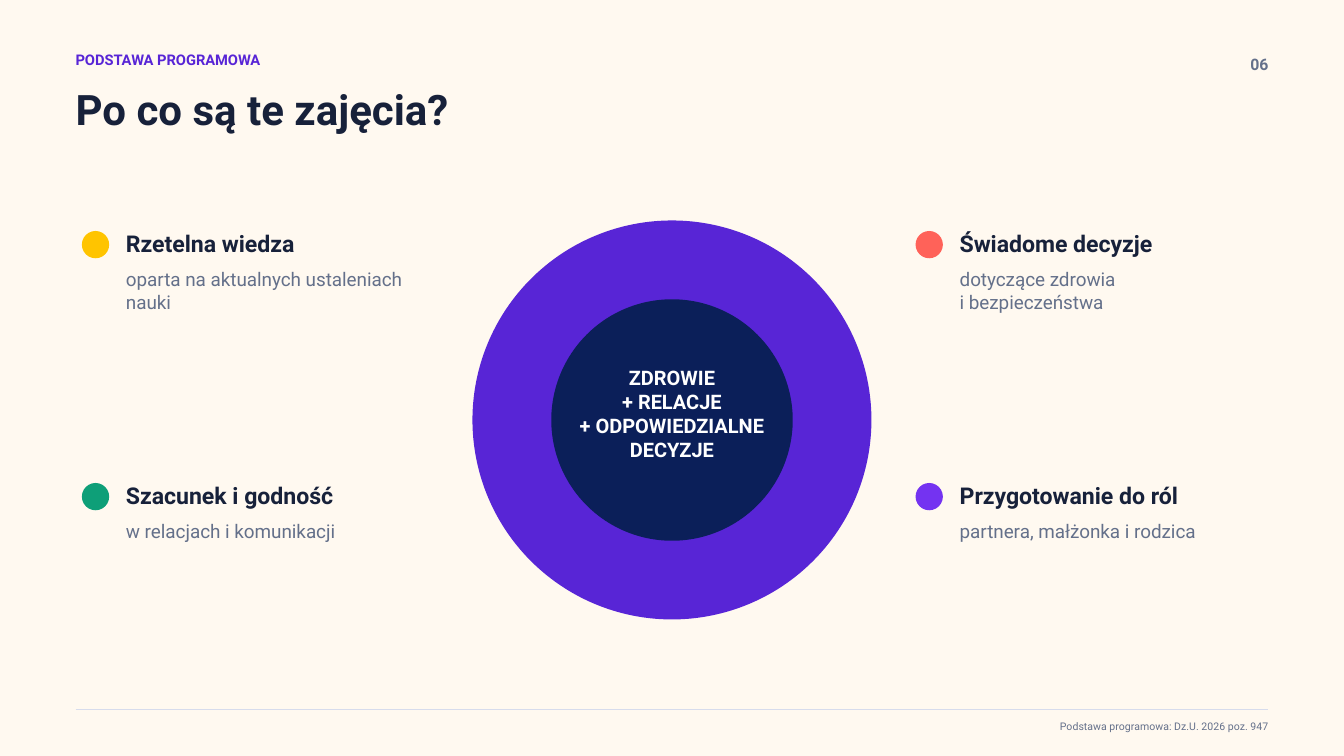
from dataclasses import dataclass

import pptx
import pptx.dml.color
import pptx.enum.shapes
import pptx.enum.text
import pptx.oxml
import pptx.oxml.ns
import pptx.slide
import pptx.util

ALIGN = pptx.enum.text.PP_ALIGN
ANCHOR = pptx.enum.text.MSO_ANCHOR


@dataclass(frozen=True)
class TextStyle:
    size: float
    color: str
    bold: bool = False
    align: ALIGN = ALIGN.LEFT
    anchor: ANCHOR = ANCHOR.TOP


@dataclass(frozen=True)
class Theme:
    font: str = "Roboto"
    background: str = "FFF9F0"
    ring: str = "5825D6"
    core: str = "0B1F59"
    rule: str = "D7DCEC"
    rule_width: float = 0.75
    section: TextStyle = TextStyle(10.5, "5825D6", True)
    title: TextStyle = TextStyle(30, "17213A", True)
    page: TextStyle = TextStyle(11.25, "64708A", True, ALIGN.RIGHT)
    center: TextStyle = TextStyle(14.25, "FFFFFF", True, ALIGN.CENTER, ANCHOR.MIDDLE)
    heading: TextStyle = TextStyle(16.5, "17213A", True)
    detail: TextStyle = TextStyle(13.5, "64708A")
    source: TextStyle = TextStyle(7.5, "64708A", align=ALIGN.RIGHT)


@dataclass(frozen=True)
class Box:
    left: int
    top: int
    width: int
    height: int


@dataclass(frozen=True)
class Goal:
    column: int
    row: int
    color: str
    heading: str
    detail: str


THEME = Theme()
COLUMN_STEP, ROW_STEP = 794, 240
GOALS = [
    Goal(0, 0, "FFC400", "Rzetelna wiedza", "oparta na aktualnych ustaleniach nauki"),
    Goal(1, 0, "FF6259", "Świadome decyzje", "dotyczące zdrowia\ni bezpieczeństwa"),
    Goal(0, 1, "0E9F78", "Szacunek i godność", "w relacjach i komunikacji"),
    Goal(1, 1, "7433F1", "Przygotowanie do ról", "partnera, małżonka i rodzica"),
]


def px(length: int) -> int:
    """Convert px to EMU at 96 px to the inch."""
    return pptx.util.Emu(length * 9525)


def rgb(color: str) -> pptx.dml.color.RGBColor:
    """Return the colour for a hex string."""
    return pptx.dml.color.RGBColor.from_string(color)


def add_text(slide: pptx.slide.Slide, box: Box, text: str, style: TextStyle) -> None:
    """Add a text box without insets, one paragraph to each line."""
    frame = slide.shapes.add_textbox(
        px(box.left), px(box.top), px(box.width), px(box.height)
    ).text_frame
    frame.margin_left = frame.margin_right = frame.margin_top = frame.margin_bottom = 0
    frame.word_wrap = True
    frame.vertical_anchor = style.anchor
    frame.text = text
    for paragraph in frame.paragraphs:
        paragraph.alignment = style.align
        for run in paragraph.runs:
            run.font.name = THEME.font
            run.font.size = pptx.util.Pt(style.size)
            run.font.bold = style.bold
            run.font.color.rgb = rgb(style.color)


def add_circle(slide: pptx.slide.Slide, left: int, top: int, diameter: int, color: str) -> None:
    """Add a filled circle without an outline."""
    circle = slide.shapes.add_shape(
        pptx.enum.shapes.MSO_SHAPE.OVAL, px(left), px(top), px(diameter), px(diameter)
    )
    circle.shadow.inherit = False
    circle.fill.solid()
    circle.fill.fore_color.rgb = rgb(color)
    circle.line.fill.background()


def add_rule(slide: pptx.slide.Slide, left: int, right: int, top: int) -> None:
    """Add the thin horizontal line above the footer."""
    rule = slide.shapes.add_connector(
        pptx.enum.shapes.MSO_CONNECTOR.STRAIGHT, px(left), px(top), px(right), px(top)
    )
    rule.line.color.rgb = rgb(THEME.rule)
    rule.line.width = pptx.util.Pt(THEME.rule_width)
    properties = rule._element.find(pptx.oxml.ns.qn("p:spPr"))
    properties.append(pptx.oxml.parse_xml(f"<a:effectLst {pptx.oxml.ns.nsdecls('a')}/>"))


def add_goal(slide: pptx.slide.Slide, goal: Goal) -> None:
    """Add a goal with its dot, heading and detail."""
    left, top = 78 + goal.column * COLUMN_STEP, 218 + goal.row * ROW_STEP
    add_circle(slide, left, top + 2, 26, goal.color)
    add_text(slide, Box(left + 42, top, 288, 32), goal.heading, THEME.heading)
    add_text(slide, Box(left + 42, top + 37, 288, 52), goal.detail, THEME.detail)


def main() -> None:
    """Build and save the slide."""
    presentation = pptx.Presentation()
    presentation.slide_width, presentation.slide_height = px(1280), px(720)
    slide = presentation.slides.add_slide(presentation.slide_layouts[6])
    slide.background.fill.solid()
    slide.background.fill.fore_color.rgb = rgb(THEME.background)

    add_text(slide, Box(72, 48, 700, 24), "PODSTAWA PROGRAMOWA", THEME.section)
    add_text(slide, Box(72, 80, 1040, 78), "Po co są te zajęcia?", THEME.title)
    add_text(slide, Box(1160, 52, 48, 26), "06", THEME.page)

    add_circle(slide, 450, 210, 380, THEME.ring)
    add_circle(slide, 525, 285, 230, THEME.core)
    purpose = "ZDROWIE\n+ RELACJE\n+ ODPOWIEDZIALNE\nDECYZJE"
    add_text(slide, Box(538, 322, 204, 144), purpose, THEME.center)

    for goal in GOALS:
        add_goal(slide, goal)

    add_rule(slide, 72, 1208, 676)
    source = "Podstawa programowa: Dz.U. 2026 poz. 947"
    add_text(slide, Box(510, 686, 698, 18), source, THEME.source)
    presentation.save("out.pptx")


if __name__ == "__main__":
    main()
